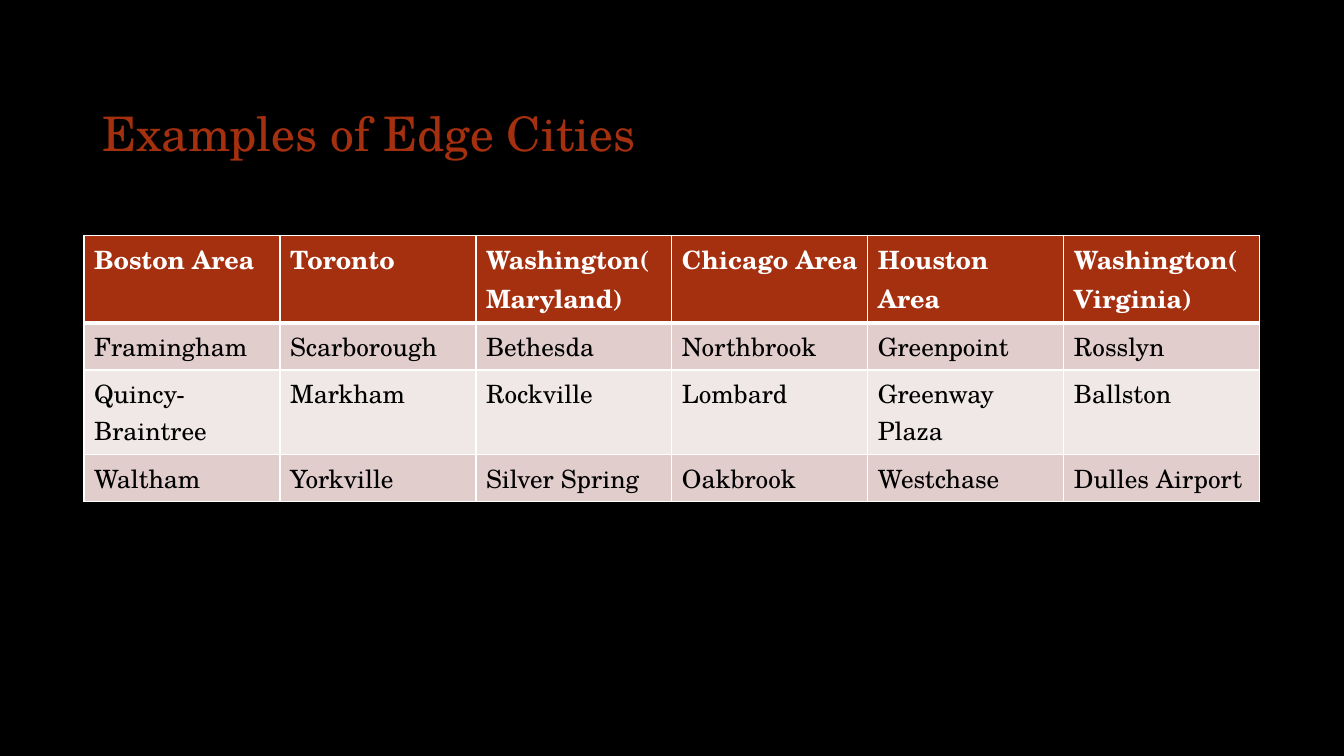
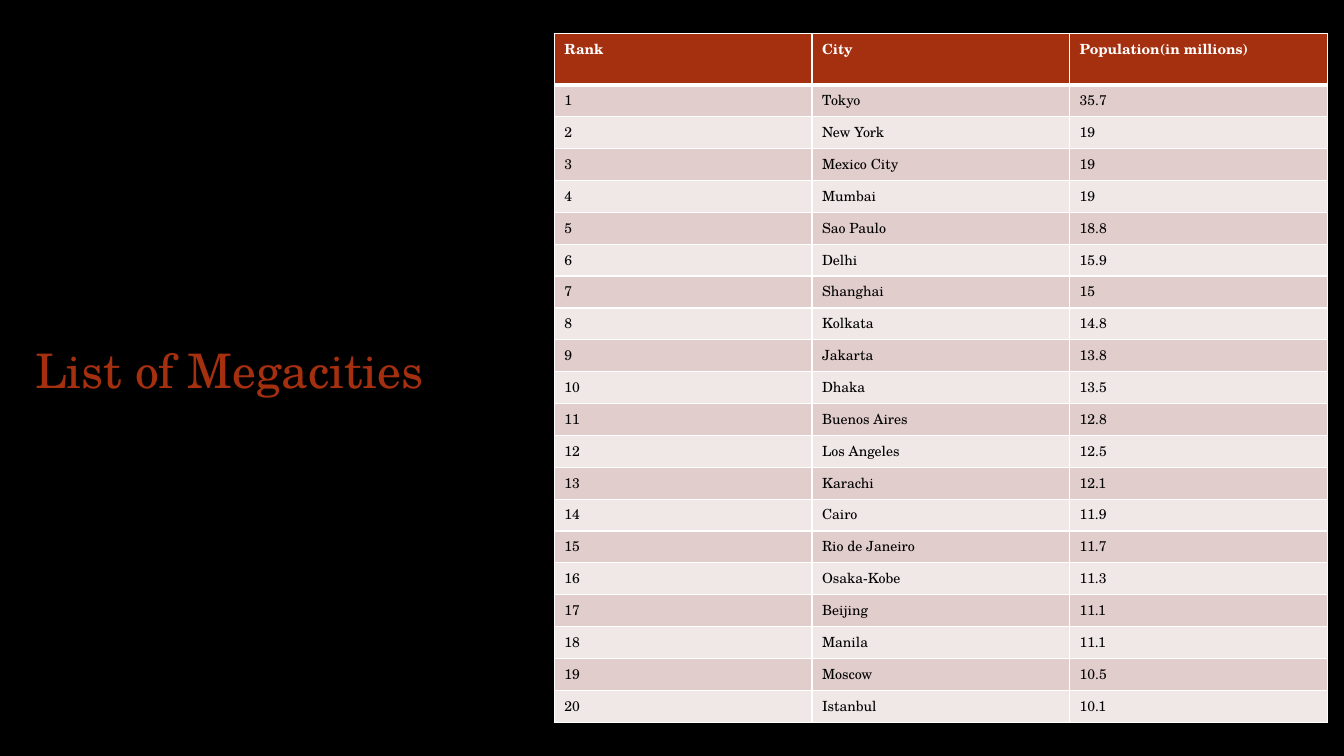
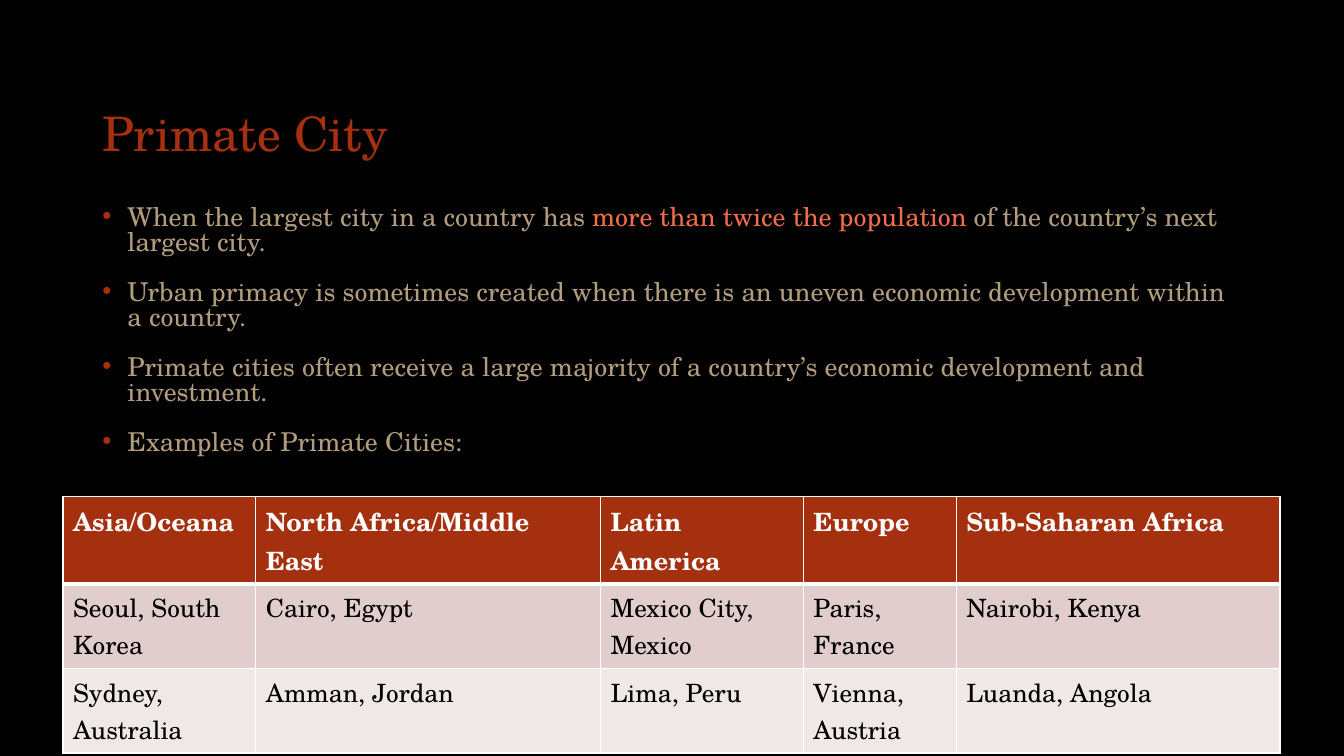
from lxml import etree
from pptx import Presentation
from pptx.dml.color import RGBColor
from pptx.enum.text import MSO_ANCHOR
from pptx.oxml.ns import qn
from pptx.util import Inches, Pt

BOTTOM = MSO_ANCHOR.BOTTOM
FONT = "TeX Gyre Schola"
BLACK = RGBColor(0x00, 0x00, 0x00)
WHITE = RGBColor(0xFF, 0xFF, 0xFF)
RUST = RGBColor(0xA5, 0x30, 0x0F)
CORAL = RGBColor(0xEE, 0x6E, 0x4A)
TAN = RGBColor(0xB1, 0x9C, 0x7D)
ROSE = RGBColor(0xE1, 0xCD, 0xCC)
PALE = RGBColor(0xF0, 0xE8, 0xE7)

COLS, ROWS = 160, 90
TITLE = (11, 4.8, 138, 15)
SIDE = (3, 33.1, 59, 15)
BODY = (11, 24, 138, 34)
HEAD, ONE, TWO = 10.45, 5.6, 10.05

EDGE = [
    ["Boston Area", "Toronto", "Washington(Maryland)", "Chicago Area",
     "Houston Area", "Washington(Virginia)"],
    ["Framingham", "Scarborough", "Bethesda", "Northbrook", "Greenpoint", "Rosslyn"],
    ["Quincy-Braintree", "Markham", "Rockville", "Lombard", "Greenway Plaza", "Ballston"],
    ["Waltham", "Yorkville", "Silver Spring", "Oakbrook", "Westchase", "Dulles Airport"],
]
MEGA = [
    ("Tokyo", 35.7), ("New York", 19), ("Mexico City", 19), ("Mumbai", 19),
    ("Sao Paulo", 18.8), ("Delhi", 15.9), ("Shanghai", 15), ("Kolkata", 14.8),
    ("Jakarta", 13.8), ("Dhaka", 13.5), ("Buenos Aires", 12.8),
    ("Los Angeles", 12.5), ("Karachi", 12.1), ("Cairo", 11.9),
    ("Rio de Janeiro", 11.7), ("Osaka-Kobe", 11.3), ("Beijing", 11.1),
    ("Manila", 11.1), ("Moscow", 10.5), ("Istanbul", 10.1),
]
PRIMATE = [
    ["Asia/Oceana", "North Africa/Middle East", "Latin America", "Europe",
     "Sub-Saharan Africa"],
    ["Seoul, South Korea", "Cairo, Egypt", "Mexico City, Mexico", "Paris, France",
     "Nairobi, Kenya"],
    ["Sydney, Australia", "Amman, Jordan", "Lima, Peru", "Vienna, Austria",
     "Luanda, Angola"],
]
POINTS = [
    [("When the largest city in a country has ", TAN),
     ("more than twice the population", CORAL),
     (" of the country’s next largest city.", TAN)],
    [("Urban primacy is sometimes created when there is an uneven economic "
      "development within a country.", TAN)],
    [("Primate cities often receive a large majority of a country’s economic "
      "development and investment.", TAN)],
    [("Examples of Primate Cities:", TAN)],
]


def grid(count):
    return Inches(count / 12)


def style(run, size, color, bold=False):
    font = run.font
    font.name, font.size, font.bold = FONT, Pt(size), bold
    font.color.rgb = color


def add_slide(deck):
    slide = deck.slides.add_slide(deck.slide_layouts[6])
    fill = slide.background.fill
    fill.solid()
    fill.fore_color.rgb = BLACK
    return slide


def add_frame(slide, box):
    frame = slide.shapes.add_textbox(*map(grid, box)).text_frame
    frame.word_wrap = True
    return frame


def add_title(slide, text, box=TITLE):
    frame = add_frame(slide, box)
    frame.vertical_anchor = BOTTOM
    frame.text = text
    para = frame.paragraphs[0]
    para.line_spacing = 0.9
    style(para.runs[0], 34, RUST)


def add_bullet(para):
    props = para._p.get_or_add_pPr()
    props.set("marL", str(grid(3)))
    props.set("indent", str(-grid(3)))
    color = etree.SubElement(props, qn("a:buClr"))
    etree.SubElement(color, qn("a:srgbClr"), val=str(RUST))
    etree.SubElement(props, qn("a:buFont"), typeface="Arial")
    etree.SubElement(props, qn("a:buChar"), char="•")


def add_points(slide, points, box):
    frame = add_frame(slide, box)
    for index, parts in enumerate(points):
        para = frame.add_paragraph() if index else frame.paragraphs[0]
        para.line_spacing = 0.8
        para.space_before = Pt(18)
        add_bullet(para)
        for text, color in parts:
            run = para.add_run()
            run.text = text
            style(run, 18.5, color)


def add_border(cell, side, width):
    props = cell._tc.get_or_add_tcPr()
    line = etree.SubElement(props, qn("a:ln" + side), w=str(Pt(width)))
    fill = etree.SubElement(line, qn("a:solidFill"))
    etree.SubElement(fill, qn("a:srgbClr"), val=str(WHITE))


def fill_cell(cell, text, row, size):
    head = row == 0
    thick = {0: "B", 1: "T"}.get(row)
    for side in "LRTB":
        add_border(cell, side, 3 if side == thick else 1)
    cell.fill.solid()
    cell.fill.fore_color.rgb = RUST if head else ROSE if row % 2 else PALE
    cell.text = text
    style(cell.text_frame.paragraphs[0].runs[0], size, WHITE if head else BLACK, head)


def add_grid(slide, data, left, top, widths, heights, size=18):
    box = (left, top, sum(widths), sum(heights))
    table = slide.shapes.add_table(len(data), len(widths), *map(grid, box)).table
    for column, width in zip(table.columns, widths):
        column.width = grid(width)
    for row, height in zip(table.rows, heights):
        row.height = grid(height)
    for row, texts in enumerate(data):
        for col, text in enumerate(texts):
            fill_cell(table.cell(row, col), text, row, size)


def edge_slide(deck):
    slide = add_slide(deck)
    add_title(slide, "Examples of Edge Cities")
    add_grid(slide, EDGE, 10, 28, [140 / 6] * 6, [HEAD, ONE, TWO, ONE])


def mega_slide(deck):
    slide = add_slide(deck)
    add_title(slide, "List of Megacities", SIDE)
    data = [["Rank", "City", "Population(in millions)"]]
    data += [[str(rank), city, str(count)]
             for rank, (city, count) in enumerate(MEGA, 1)]
    add_grid(slide, data, 66, 4, [92 / 3] * 3, [6.1] + [75.9 / 20] * 20, 10)


def primate_slide(deck):
    slide = add_slide(deck)
    add_title(slide, "Primate City")
    add_points(slide, POINTS, BODY)
    add_grid(slide, PRIMATE, 7.5, 59.1, [22.95, 41.05, 24.15, 18.2, 38.55],
             [HEAD, TWO, TWO])


def main():
    deck = Presentation()
    deck.slide_width, deck.slide_height = grid(COLS), grid(ROWS)
    edge_slide(deck)
    mega_slide(deck)
    primate_slide(deck)
    deck.save("out.pptx")


if __name__ == "__main__":
    main()
